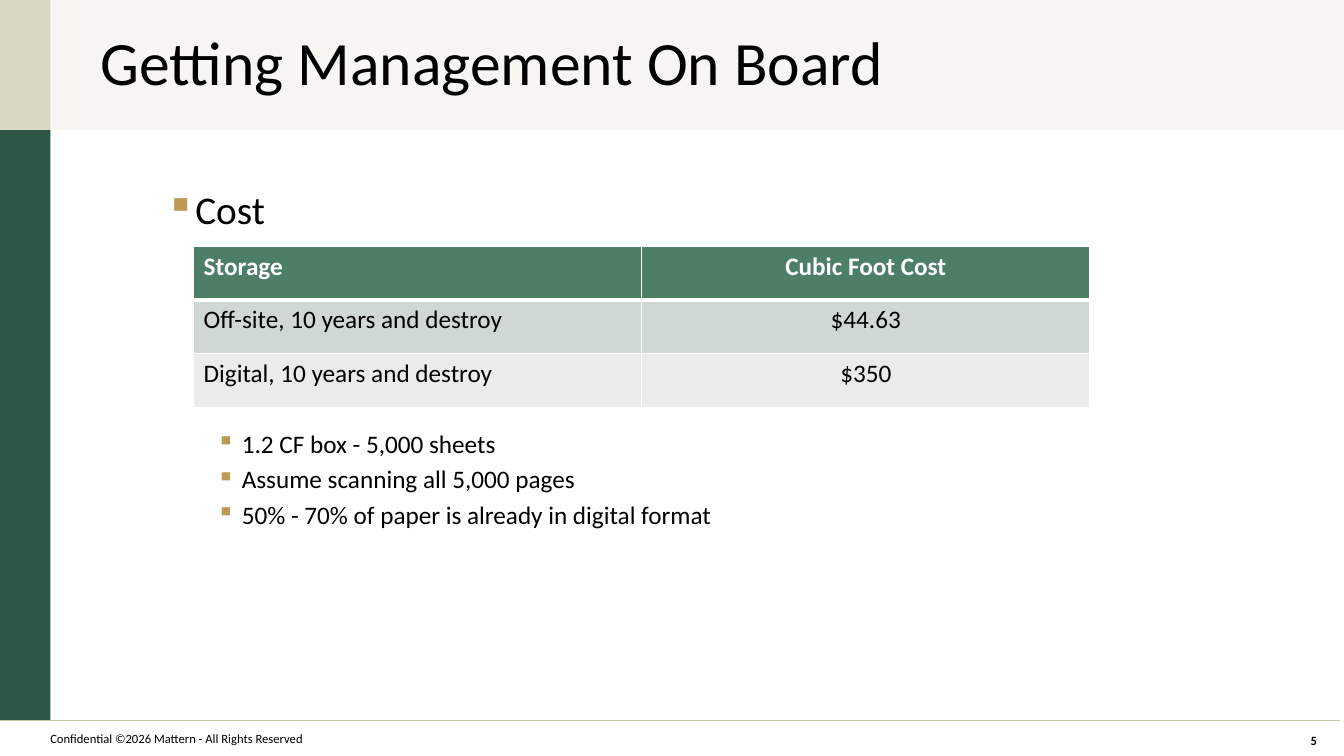
from dataclasses import dataclass

from lxml import etree
from pptx import Presentation
from pptx.dml.color import RGBColor
from pptx.enum.shapes import MSO_CONNECTOR, MSO_SHAPE
from pptx.enum.text import MSO_ANCHOR, PP_ALIGN
from pptx.oxml.ns import qn
from pptx.util import Inches, Pt

RECTANGLE = MSO_SHAPE.RECTANGLE
STRAIGHT = MSO_CONNECTOR.STRAIGHT
TOP, MIDDLE = MSO_ANCHOR.TOP, MSO_ANCHOR.MIDDLE
LEFT, CENTER = PP_ALIGN.LEFT, PP_ALIGN.CENTER
FONT = "Calibri"
COLORS = {
    "sand": "DAD7C3", "forest": "2C5643", "rule": "CAC6A8", "gold": "BC9A54",
    "black": "000000", "white": "FFFFFF",
    "header": "4D7F66", "off_site": "D0D8D3", "digital": "E9ECEA",
}


@dataclass(frozen=True)
class Box:
    left: float
    top: float
    width: float
    height: float

    def lengths(self) -> tuple:
        return tuple(Inches(v) for v in (self.left, self.top, self.width, self.height))


@dataclass(frozen=True)
class Panel:
    box: Box
    color: str
    opacity: int = 100


@dataclass(frozen=True)
class Label:
    text: str
    box: Box
    size: int
    bold: bool = False
    align: PP_ALIGN = LEFT
    anchor: MSO_ANCHOR = TOP
    line_spacing: float = 1.0


@dataclass(frozen=True)
class Bullet:
    text: str
    size: int
    indent: float
    space_before: int
    level: int


@dataclass(frozen=True)
class StorageRow:
    storage: str
    cost: str
    fill: str
    color: str = "black"
    bold: bool = False
    bottom_border: int = 1


PANELS = [
    Panel(Box(0, 0, 0.5, 1.29), "sand"),
    Panel(Box(0, 1.29, 0.5, 5.86), "forest"),
    Panel(Box(0.5, -0.03, 12.83, 1.32), "sand", 21),
]
LABELS = [
    Label("Confidential ©2026 Mattern - All Rights Reserved", Box(0.4, 7.2, 5.42, 0.28), 9),
    Label("5", Box(12.78, 7.21, 0.5, 0.28), 9, True, CENTER, MIDDLE),
    Label("Getting Management On Board", Box(0.9, -0.01, 11.5, 1.32), 44,
          anchor=MIDDLE, line_spacing=0.9),
]
BULLETS = [
    Bullet("Cost", 28, 0.75, 0, 1),
    Bullet("1.2 CF box - 5,000 sheets", 18, 1.25, 142, 2),
    Bullet("Assume scanning all 5,000 pages", 18, 1.25, 6, 2),
    Bullet("50% - 70% of paper is already in digital format", 18, 1.25, 6, 2),
]
STORAGE_ROWS = [
    StorageRow("Storage", "Cubic Foot Cost", "header", "white", True, 3),
    StorageRow("Off-site, 10 years and destroy", "$44.63", "off_site"),
    StorageRow("Digital, 10 years and destroy", "$350", "digital"),
]


def rgb(color: str) -> RGBColor:
    return RGBColor.from_string(COLORS[color])


def add_run(paragraph, text: str, size: int, color: str = "black", bold: bool = False) -> None:
    run = paragraph.add_run()
    run.text = text
    run.font.name = FONT
    run.font.size = Pt(size)
    run.font.bold = bold
    run.font.color.rgb = rgb(color)


def add_panel(slide, panel: Panel) -> None:
    shape = slide.shapes.add_shape(RECTANGLE, *panel.box.lengths())
    shape.shadow.inherit = False
    shape.fill.solid()
    shape.fill.fore_color.rgb = rgb(panel.color)
    shape.line.fill.background()
    if panel.opacity < 100:
        color = shape.fill._xPr.find(".//" + qn("a:srgbClr"))
        etree.SubElement(color, qn("a:alpha"), val=str(panel.opacity * 1000))


def add_footer_rule(slide) -> None:
    rule = slide.shapes.add_connector(
        STRAIGHT, Inches(0), Inches(7.15), Inches(13.29), Inches(7.15))
    rule.line.color.rgb = rgb("rule")
    rule.line.width = Pt(0.75)
    etree.SubElement(rule._element.spPr, qn("a:effectLst"))


def add_frame(slide, box: Box, anchor: MSO_ANCHOR = TOP):
    frame = slide.shapes.add_textbox(*box.lengths()).text_frame
    frame.word_wrap = True
    frame.vertical_anchor = anchor
    return frame


def add_label(slide, label: Label) -> None:
    paragraph = add_frame(slide, label.box, label.anchor).paragraphs[0]
    paragraph.alignment = label.align
    paragraph.line_spacing = label.line_spacing
    add_run(paragraph, label.text, label.size, bold=label.bold)


def add_bullets(slide, box: Box, bullets: list[Bullet]) -> None:
    frame = add_frame(slide, box)
    for index, bullet in enumerate(bullets):
        paragraph = frame.add_paragraph() if index else frame.paragraphs[0]
        properties = paragraph._p.get_or_add_pPr()
        properties.set("marL", str(Inches(bullet.indent)))
        properties.set("indent", str(Inches(-0.25)))
        bullet_color = etree.SubElement(properties, qn("a:buClr"))
        etree.SubElement(bullet_color, qn("a:srgbClr"), val=COLORS["gold"])
        etree.SubElement(properties, qn("a:buChar"), char="▪")
        paragraph.level = bullet.level
        paragraph.line_spacing = 0.9
        paragraph.space_before = Pt(bullet.space_before)
        add_run(paragraph, bullet.text, bullet.size)


def add_borders(cell, bottom: int) -> None:
    properties = cell._tc.get_or_add_tcPr()
    for side, width in (("L", 1), ("R", 1), ("T", 1), ("B", bottom)):
        border = etree.SubElement(properties, qn(f"a:ln{side}"), w=str(Pt(width)))
        fill = etree.SubElement(border, qn("a:solidFill"))
        etree.SubElement(fill, qn("a:srgbClr"), val=COLORS["white"])


def add_storage_table(slide, box: Box, rows: list[StorageRow]) -> None:
    table = slide.shapes.add_table(len(rows), 2, *box.lengths()).table
    for row_index, row in enumerate(rows):
        top_border_row = rows[row_index - 1] if row_index else None
        for column, (text, align) in enumerate(((row.storage, LEFT), (row.cost, CENTER))):
            cell = table.cell(row_index, column)
            add_borders(cell, row.bottom_border)
            if top_border_row:
                top = cell._tc.tcPr.find(qn("a:lnT"))
                top.set("w", str(Pt(top_border_row.bottom_border)))
            cell.fill.solid()
            cell.fill.fore_color.rgb = rgb(row.fill)
            paragraph = cell.text_frame.paragraphs[0]
            paragraph.alignment = align
            add_run(paragraph, text, 18, row.color, row.bold)


def main() -> None:
    presentation = Presentation()
    presentation.slide_width = Inches(13.33)
    presentation.slide_height = Inches(7.5)
    slide = presentation.slides.add_slide(presentation.slide_layouts[6])
    for panel in PANELS:
        add_panel(slide, panel)
    add_footer_rule(slide)
    for label in LABELS:
        add_label(slide, label)
    add_bullets(slide, Box(1.05, 1.84, 12.28, 4.53), BULLETS)
    add_storage_table(slide, Box(1.92, 2.44, 8.89, 1.6), STORAGE_ROWS)
    presentation.save("out.pptx")


if __name__ == "__main__":
    main()
